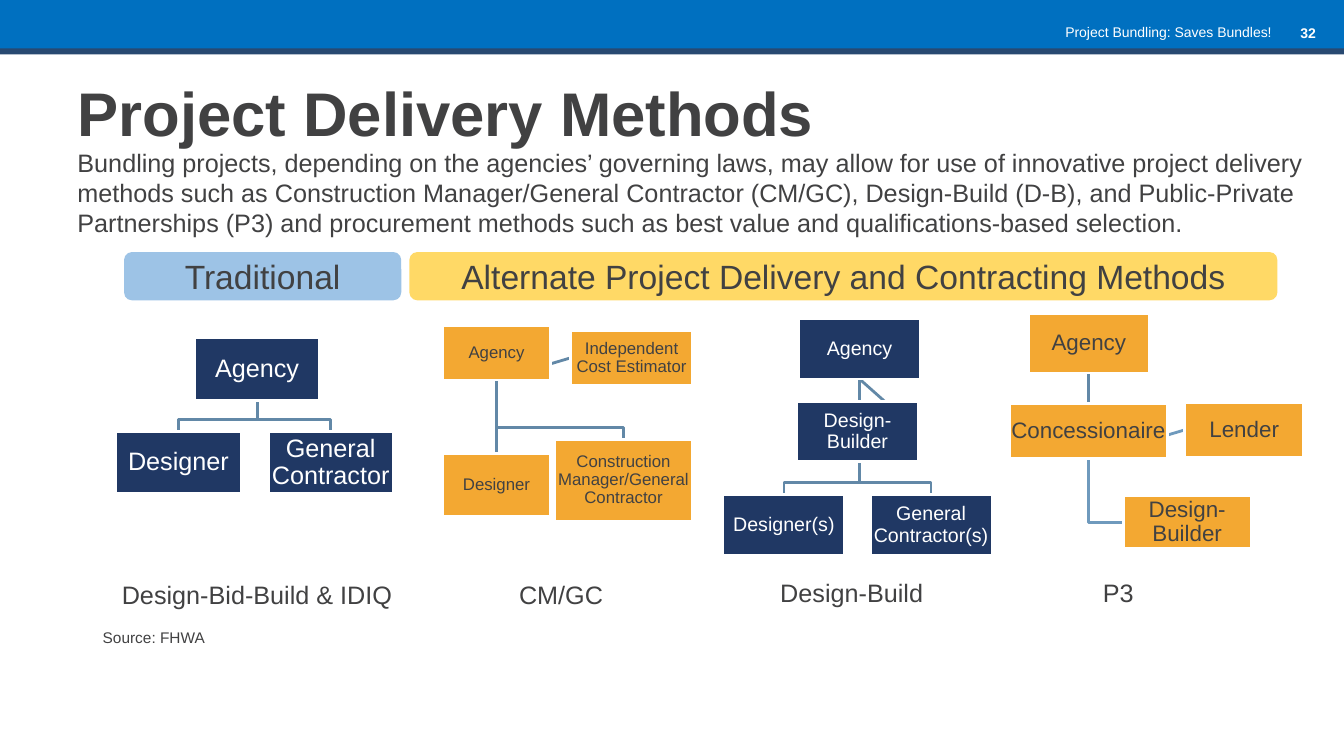
from pptx import Presentation, util as u
from pptx.dml.color import RGBColor
from pptx.enum import shapes, text
from pptx.oxml.ns import qn
from lxml import etree

INK, WHITE, NAVY, ORANGE = "414142", "FFFFFF", "203864", "F3A832"
LINK, PALE_LINK = "6288A7", "6F9ABD"
CELL = 0.1  # grid step of the charts, in inches
BEND = 0.12  # distance from an elbow to the box below it
LEFT, CENTER, RIGHT = text.PP_ALIGN.LEFT, text.PP_ALIGN.CENTER, text.PP_ALIGN.RIGHT
MIDDLE, TOP = text.MSO_ANCHOR.MIDDLE, text.MSO_ANCHOR.TOP


def rgb(hex_color):
    return RGBColor.from_string(hex_color)


def write(shape, words, size, color=INK, align=LEFT, anchor=TOP, bold=False, wrap=True):
    tf = shape.text_frame
    tf.text = words
    tf.word_wrap = wrap
    tf.vertical_anchor = anchor
    p = tf.paragraphs[0]
    p.alignment = align
    font = p.runs[0].font
    font.name, font.size, font.bold = "Arial", u.Pt(size), bold
    font.color.rgb = rgb(color)
    return tf


def label(s, box, words, size, **style):
    write(s.shapes.add_textbox(*map(u.Inches, box)), words, size, **style)


def block(s, box, fill, outline=None, kind=shapes.MSO_SHAPE.RECTANGLE):
    sp = s.shapes.add_shape(kind, *map(u.Inches, box))
    sp.shadow.inherit = False
    sp.fill.solid()
    sp.fill.fore_color.rgb = rgb(fill)
    if outline:
        sp.line.color.rgb = rgb(outline)
        sp.line.width = u.Pt(2)
    else:
        sp.line.fill.background()
    return sp


def header(s, width):
    block(s, (0, 0, width, 0.53), "0070C0")
    block(s, (0, 0.48, width, 0.06), "284971")
    label(s, (12.15, 0.19, 1, 0.27), "32", 10, color=WHITE, align=RIGHT, bold=True)
    label(s, (8.78, 0.18, 3.93, 0.27), "Project Bundling: Saves Bundles!", 10,
          color=WHITE, align=RIGHT)


def banner(s, box, words, fill):
    sp = block(s, box, fill, kind=shapes.MSO_SHAPE.ROUNDED_RECTANGLE)
    write(sp, words, 24, align=CENTER, anchor=MIDDLE)


def link(s, parent, child, route, color=LINK):
    """Join the parent's bottom centre to the child's top ("drop") or side."""
    px, py, pw, ph = parent
    cx, cy, cw, ch = child
    x, y = px + pw / 2, py + ph
    top, middle, center = cy - BEND, cy + ch / 2, cx + cw / 2
    points = {
        "drop": [(x, y), (x, top), (center, top), (center, cy)],
        "turn": [(x, y), (x, middle), (cx, middle)],
        "plumb": [(x, y), (x, cy)],
        "left": [(x, y), (cx, middle)],
        "right": [(x, y), (cx + cw, middle)],
    }[route]
    points = [(u.Inches(a), u.Inches(b)) for a, b in points]
    if len(points) == 2:
        line = s.shapes.add_connector(shapes.MSO_CONNECTOR.STRAIGHT, *points[0], *points[1])
        etree.SubElement(line._element.spPr, qn("a:effectLst"))
    else:
        builder = s.shapes.build_freeform(*points[0])
        builder.add_line_segments(points[1:], close=False)
        line = builder.convert_to_shape()
        line.fill.background()
        line.shadow.inherit = False
    line.line.color.rgb = rgb(color)
    line.line.width = u.Pt(2)


def org_chart(s, origin, nodes, links, fill, color, size):
    """Nodes are (column, row, columns, rows) in grid cells from the origin."""
    left, top = origin
    boxes = {name: (left + c * CELL, top + r * CELL, w * CELL, h * CELL)
             for name, (c, r, w, h) in nodes.items()}
    for parent, child, *style in links:
        link(s, boxes[parent], boxes[child], *style)
    for name, box in boxes.items():
        tf = write(block(s, box, fill, WHITE), name, size, color, CENTER, MIDDLE)
        tf.margin_left = tf.margin_right = tf.margin_top = tf.margin_bottom = u.Inches(0.01)
        tf.paragraphs[0].line_spacing = 0.9


CHARTS = [
    ((1.15, 3.35),
     {"Agency": (7.8, 0, 12.4, 6.2), "Designer": (0, 9.3, 12.4, 6.2),
      "General Contractor": (15.1, 9.3, 12.4, 6.2)},
     [("Agency", "General Contractor", "drop"), ("Agency", "Designer", "drop")],
     NAVY, WHITE, 18),
    ((4.39, 3.23),
     {"Agency": (0, 0, 10.7, 5.4), "Designer": (0, 12.7, 10.7, 6.2),
      "Construction Manager/General Contractor": (11.1, 11.3, 13.7, 8.1),
      "Independent Cost Estimator": (12.7, 0.5, 12.1, 5.4)},
     [("Agency", "Independent Cost Estimator", "left"),
      ("Agency", "Construction Manager/General Contractor", "drop"),
      ("Agency", "Designer", "plumb")],
     ORANGE, INK, 12),
    ((7.17, 3.16),
     {"Agency": (7.5, 0, 12.1, 6), "Designer(s)": (0, 17.5, 12.1, 6),
      "General Contractor(s)": (14.6, 17.5, 12.1, 6),
      "Design-Builder": (7.3, 8.2, 12.1, 6)},
     [("Agency", "Design-Builder", "right"), ("Agency", "General Contractor(s)", "drop"),
      ("Agency", "Designer(s)", "drop")],
     NAVY, WHITE, 14),
    ((10.01, 3.11),
     {"Agency": (1.9, 0, 12, 5.9), "Concessionaire": (0, 8.9, 15.7, 5.5),
      "Design- Builder": (11.3, 18.1, 12.7, 5.2), "Lender": (17.4, 8.8, 11.8, 5.5)},
     [("Concessionaire", "Lender", "left", PALE_LINK),
      ("Concessionaire", "Design- Builder", "turn", PALE_LINK),
      ("Agency", "Concessionaire", "plumb")],
     ORANGE, INK, 16),
]
CAPTIONS = [
    ("Design-Bid-Build & IDIQ", (1.11, 5.7, 2.89, 0.4)),
    ("CM/GC", (5.05, 5.7, 1.04, 0.4)),
    ("Design-Build", (7.64, 5.68, 1.63, 0.4)),
    ("P3", (10.84, 5.68, 0.51, 0.4)),
]


def main():
    prs = Presentation()
    prs.slide_width, prs.slide_height = u.Inches(13.33), u.Inches(7.5)
    s = prs.slides.add_slide(prs.slide_layouts[5])
    header(s, 13.33)
    title = s.shapes.title
    title.left, title.top, title.width, title.height = map(u.Inches, (0.67, 0.67, 12, 0.88))
    write(title, "Project Delivery Methods", 44, anchor=MIDDLE, bold=True)
    label(s, (0.67, 1.41, 12.46, 1.01),
          "Bundling projects, depending on the agencies’ governing laws, may allow for use of "
          "innovative project delivery methods such as Construction Manager/General Contractor "
          "(CM/GC), Design-Build (D-B), and Public-Private Partnerships (P3) and procurement "
          "methods such as best value and qualifications-based selection.", 18)
    banner(s, (1.23, 2.5, 2.75, 0.48), "Traditional", "9DC3E6")
    banner(s, (4.06, 2.5, 8.61, 0.48),
           "Alternate Project Delivery and Contracting Methods", "FFD966")
    for chart in CHARTS:
        org_chart(s, *chart)
    for words, box in CAPTIONS:
        label(s, box, words, 18, wrap=False)
    label(s, (0.92, 6.18, 1.83, 0.29), "Source: FHWA", 11)
    prs.save("out.pptx")


if __name__ == "__main__":
    main()
